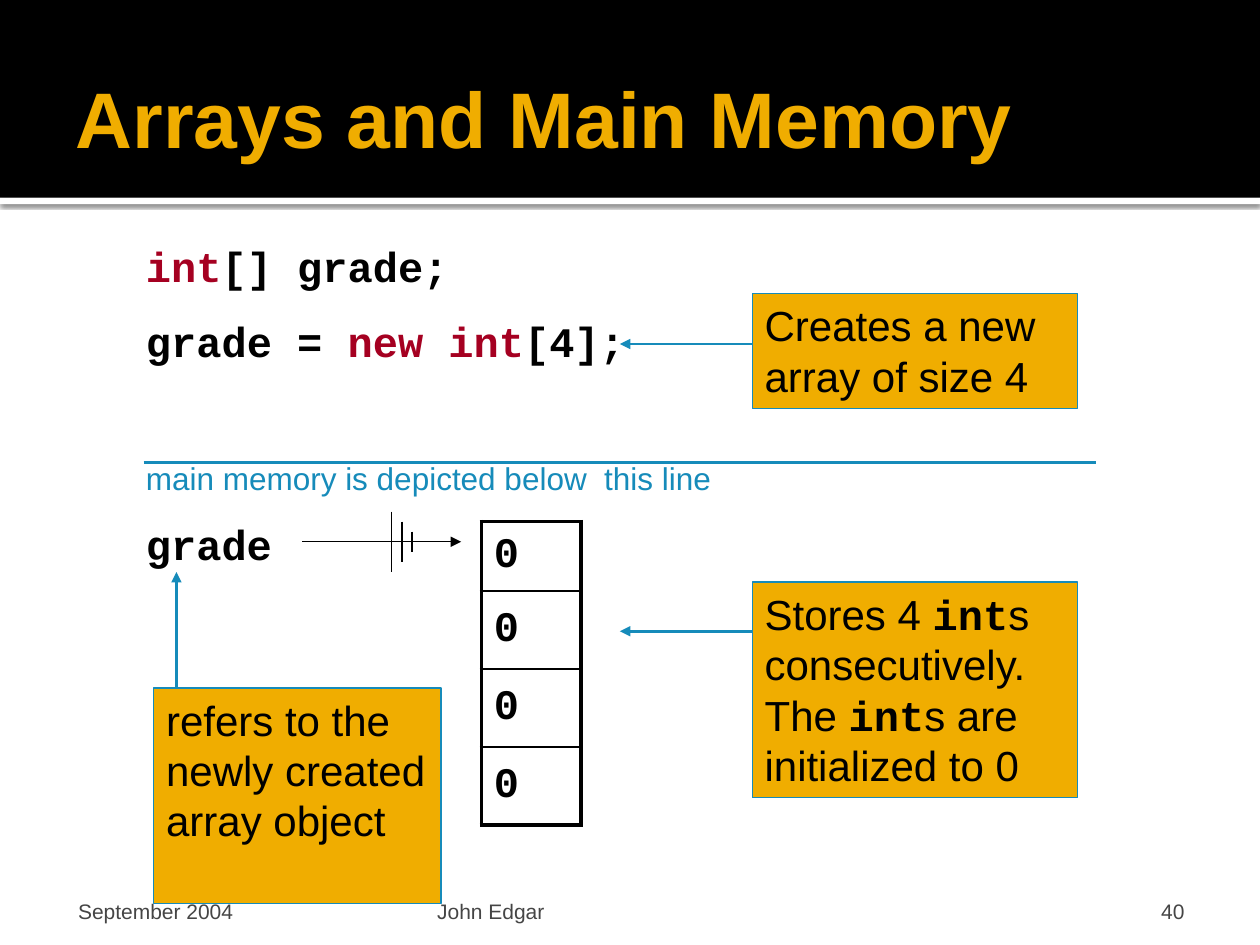
"""Build a slide on how a Java array sits in main memory."""
from typing import NamedTuple

from lxml import etree
from pptx import Presentation
from pptx import util as u
from pptx.dml.color import RGBColor
from pptx.enum import shapes, text
from pptx.oxml import parse_xml
from pptx.oxml.ns import nsdecls, qn

PX = 9144
BLACK = RGBColor(0x00, 0x00, 0x00)
WHITE = RGBColor(0xFF, 0xFF, 0xFF)
GOLD = RGBColor(0xF0, 0xAD, 0x00)
BLUE = RGBColor(0x16, 0x8B, 0xBA)
RED = RGBColor(0xA5, 0x00, 0x21)
GREY = RGBColor(0x45, 0x45, 0x45)
SANS, MONO = "Arial", "Courier New"
LEFT, RIGHT = text.PP_ALIGN.LEFT, text.PP_ALIGN.RIGHT
TOP, MID, LOW = (text.MSO_ANCHOR.TOP, text.MSO_ANCHOR.MIDDLE,
                 text.MSO_ANCHOR.BOTTOM)


class Rect(NamedTuple):
    x: int
    y: int
    w: int
    h: int

    def emu(self) -> list:
        return [n * PX for n in self]


class Run(NamedTuple):
    words: str
    font: str = SANS
    size: int = 24
    color: RGBColor = BLACK
    bold: bool = False


class Label(NamedTuple):
    rect: Rect
    lines: list
    pad: tuple = (10, 5, 10, 5)
    anchor: text.MSO_ANCHOR = TOP
    align: text.PP_ALIGN = LEFT


class Line(NamedTuple):
    x1: int
    y1: int
    x2: int
    y2: int
    color: RGBColor = BLACK
    width: float = 0.75
    arrow: bool = False


def code(words: str, color: RGBColor = BLACK) -> Run:
    return Run(words, MONO, color=color, bold=True)


def foot(x: int, w: int, words: str, pad: tuple, align=LEFT) -> Label:
    return Label(Rect(x, 683, w, 50), [[Run(words, size=12, color=GREY)]],
                 pad, LOW, align)


def style(run, item: Run) -> None:
    font = run.font
    font.name, font.size, font.bold = item.font, u.Pt(item.size), item.bold
    font.color.rgb = item.color


def write(frame, label: Label) -> None:
    frame.word_wrap = True
    frame.auto_size = text.MSO_AUTO_SIZE.NONE
    frame.vertical_anchor = label.anchor
    (frame.margin_left, frame.margin_top, frame.margin_right,
     frame.margin_bottom) = [n * PX for n in label.pad]
    for i, line in enumerate(label.lines):
        para = frame.add_paragraph() if i else frame.paragraphs[0]
        para.alignment = label.align
        para.space_before = u.Pt(14 if i else 0)
        for item in line:
            run = para.add_run()
            run.text = item.words
            style(run, item)


def draw_text(slide, label: Label) -> None:
    write(slide.shapes.add_textbox(*label.rect.emu()).text_frame, label)


def draw_rect(slide, rect: Rect, fill: RGBColor):
    shape = slide.shapes.add_shape(shapes.MSO_SHAPE.RECTANGLE, *rect.emu())
    shape.shadow.inherit = False
    shape.fill.solid()
    shape.fill.fore_color.rgb = fill
    shape.line.fill.background()
    return shape


def draw_note(slide, label: Label) -> None:
    shape = draw_rect(slide, label.rect, GOLD)
    shape.line.color.rgb = BLUE
    shape.line.width = u.Pt(0.75)
    write(shape.text_frame, label)


def draw_line(slide, line: Line) -> None:
    ends = [n * PX for n in line[:4]]
    link = slide.shapes.add_connector(shapes.MSO_CONNECTOR.STRAIGHT, *ends)
    link.line.color.rgb = line.color
    link.line.width = u.Pt(line.width)
    if line.arrow:
        etree.SubElement(link.line._get_or_add_ln(), qn("a:tailEnd"),
                         type="triangle")
    etree.SubElement(link._element.spPr, qn("a:effectLst"))


def draw_head(slide, label: Label) -> None:
    title = slide.shapes.title
    strip = draw_rect(slide, Rect(0, 157, 1000, 5), WHITE)
    strip._element.spPr.find(qn("a:effectLst")).append(parse_xml(
        f'<a:outerShdw {nsdecls("a")} blurRad="31750" dist="10160" '
        'dir="5400000"><a:srgbClr val="000000"><a:alpha val="60000"/>'
        '</a:srgbClr></a:outerShdw>'))
    band = draw_rect(slide, Rect(0, 0, 1000, 157), BLACK)
    for shape in (strip, band):
        title._element.addprevious(shape._element)
    title.left, title.top, title.width, title.height = label.rect.emu()
    write(title.text_frame, label)


def edge(cell, sides: dict) -> None:
    props = cell._tc.get_or_add_tcPr()
    for i, (side, width) in enumerate(sides.items()):
        props.insert(i, parse_xml(
            f'<a:ln{side} {nsdecls("a")} w="{u.Pt(width)}"><a:solidFill>'
            f'<a:srgbClr val="{BLACK}"/></a:solidFill></a:ln{side}>'))


def draw_cells(slide, rect: Rect, highs: list) -> None:
    table = slide.shapes.add_table(len(highs), 1, *rect.emu()).table
    table.first_row = table.horz_banding = False
    table.columns[0].width = rect.w * PX
    last = len(highs) - 1
    for i, high in enumerate(highs):
        table.rows[i].height = high * PX
        cell = table.cell(i, 0)
        cell.text_frame.text = "0"
        style(cell.text_frame.paragraphs[0].runs[0], code("0"))
        cell.vertical_anchor = MID
        cell.fill.background()
        edge(cell, {"L": 2.25, "R": 2.25, "T": 1 if i else 2.25,
                    "B": 2.25 if i == last else 1})


HEAD = Label(Rect(50, 30, 900, 125),
             [[Run("Arrays and Main Memory", SANS, 45, GOLD, True)]],
             (10, 5, 5, 5), MID)
TEXTS = [
    foot(50, 233, "September 2004", (12, 5, 5, 0)),
    foot(342, 317, "John Edgar", (5, 5, 5, 0)),
    foot(717, 233, "40", (10, 5, 10, 0), RIGHT),
    Label(Rect(106, 186, 402, 110), [
        [code("int", RED), code("[] grade;")],
        [code("grade = "), code("new int", RED), code("[4];")]]),
    Label(Rect(106, 407, 126, 50), [[code("grade")]]),
    Label(Rect(106, 359, 480, 86),
          [[Run("main memory is depicted below  this line", SANS, 18, BLUE)]]),
]
NOTES = [
    Label(Rect(597, 233, 258, 91), [[Run("Creates a new array of size 4")]]),
    Label(Rect(597, 462, 258, 171), [[
        Run("Stores 4 "), code("int"), Run("s consecutively.  The "),
        code("int"), Run("s are initialized to 0")]]),
    Label(Rect(122, 546, 228, 171),
          [[Run("refers to the newly created array object")]]),
]
LINES = [
    Line(597, 273, 492, 273, BLUE, 1.5, True),
    Line(597, 501, 492, 501, BLUE, 1.5, True),
    Line(140, 546, 140, 454, BLUE, 1.5, True),
    Line(114, 367, 870, 367, BLUE, 1.5),
    Line(240, 430, 366, 430, arrow=True),
] + [Line(311 + 8 * i, 406 + 8 * i, 311 + 8 * i, 454 - 8 * i)
     for i in range(3)]


def main() -> None:
    deck = Presentation()
    deck.slide_width, deck.slide_height = 1000 * PX, 750 * PX
    slide = deck.slides.add_slide(deck.slide_layouts[5])
    draw_head(slide, HEAD)
    draw_cells(slide, Rect(382, 414, 79, 241), [55, 62, 62, 62])
    for label in TEXTS:
        draw_text(slide, label)
    for note in NOTES:
        draw_note(slide, note)
    for line in LINES:
        draw_line(slide, line)
    deck.save("out.pptx")


if __name__ == "__main__":
    main()
